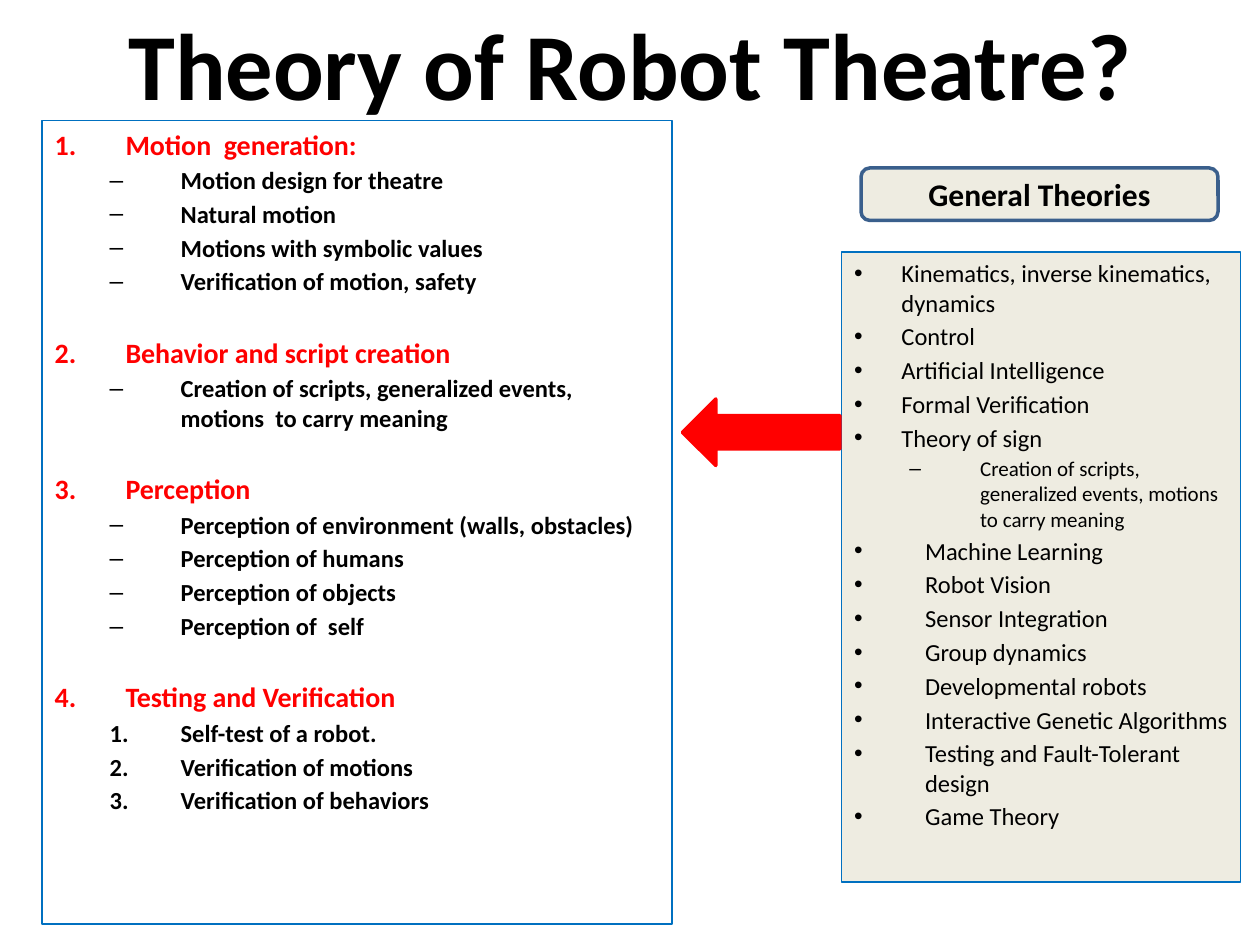
import pptx
import pptx.util
import pptx.dml.color
import pptx.enum.shapes
import pptx.enum.text
import pptx.oxml.ns
from dataclasses import dataclass
from lxml import etree

Pt = pptx.util.Pt
SHAPES = pptx.enum.shapes.MSO_SHAPE
ANCHOR = pptx.enum.text.MSO_ANCHOR
ALIGN = pptx.enum.text.PP_ALIGN


@dataclass(frozen=True)
class Theme:
    font: str = "Calibri"
    text: str = "000000"
    accent: str = "FF0000"
    panel: str = "EEECE1"
    border: str = "0070C0"
    badge_border: str = "3A5F8C"
    title_size: float = 54
    badge_size: float = 18
    heading_size: float = 16
    item_size: float = 14
    detail_size: float = 12


THEME = Theme()
NUMBERED = "1."
HANGING = 40.5
TOPIC_GAP = 22.6

TOPICS = [
    ("Motion  generation:", "–", [
        "Motion design for theatre", "Natural motion",
        "Motions with symbolic values", "Verification of motion, safety"]),
    ("Behavior and script creation", "–", [
        "Creation of scripts, generalized events, motions  to carry meaning"]),
    ("Perception", "–", [
        "Perception of environment (walls, obstacles)", "Perception of humans",
        "Perception of objects", "Perception of  self"]),
    ("Testing and Verification", NUMBERED, [
        "Self-test of a robot.", "Verification of motions",
        "Verification of behaviors"]),
]
CORE_THEORIES = [
    "Kinematics, inverse kinematics, dynamics", "Control",
    "Artificial Intelligence", "Formal Verification", "Theory of sign"]
SIGN_DETAIL = "Creation of scripts, generalized events, motions  to carry meaning"
APPLIED_THEORIES = [
    "Machine Learning", "Robot Vision", "Sensor Integration",
    "Group dynamics", "Developmental robots", "Interactive Genetic Algorithms",
    "Testing and Fault-Tolerant design", "Game Theory"]


def rgb(value):
    return pptx.dml.color.RGBColor.from_string(value)


def set_bullet(paragraph, bullet, margin, hanging):
    properties = paragraph._p.get_or_add_pPr()
    properties.set("marL", str(Pt(margin)))
    properties.set("indent", str(-Pt(hanging)))
    qn = pptx.oxml.ns.qn
    if bullet == NUMBERED:
        etree.SubElement(properties, qn("a:buFont"), typeface="+mj-lt")
        etree.SubElement(properties, qn("a:buAutoNum"), type="arabicPeriod")
    else:
        etree.SubElement(properties, qn("a:buFont"), typeface="Arial")
        etree.SubElement(properties, qn("a:buChar"), char=bullet)


def add_text(frame, text, size, color=THEME.text, bold=False, align=ALIGN.LEFT,
             level=0, before=None, bullet=None, margin=0, hanging=HANGING):
    """Write text into the first free paragraph of the frame."""
    paragraph = frame.paragraphs[-1]
    if paragraph.runs:
        paragraph = frame.add_paragraph()
    paragraph.alignment = align
    paragraph.level = level
    if before is not None:
        paragraph.space_before = Pt(before)
    if bullet:
        set_bullet(paragraph, bullet, margin, hanging)
    run = paragraph.add_run()
    run.text = text
    run.font.name = THEME.font
    run.font.size = Pt(size)
    run.font.bold = bold
    run.font.color.rgb = rgb(color)


def place(shape, left, top, width, height):
    shape.left, shape.top = Pt(left), Pt(top)
    shape.width, shape.height = Pt(width), Pt(height)


def prepare_frame(shape, anchor):
    frame = shape.text_frame
    frame.word_wrap = True
    frame.auto_size = pptx.enum.text.MSO_AUTO_SIZE.NONE
    frame.vertical_anchor = anchor
    return frame


def set_border(shape, color, width):
    shape.line.color.rgb = rgb(color)
    shape.line.width = Pt(width)


def add_box(slide, kind, bounds, fill, border, border_width):
    box = slide.shapes.add_shape(kind, *map(Pt, bounds))
    box.shadow.inherit = False
    box.fill.solid()
    box.fill.fore_color.rgb = rgb(fill)
    set_border(box, border, border_width)
    return box


def fill_title(title):
    place(title, 36, 0, 648, 72)
    add_text(prepare_frame(title, ANCHOR.MIDDLE), "Theory of Robot Theatre?",
             THEME.title_size, bold=True, align=ALIGN.CENTER)


def fill_topics(body):
    place(body, 24, 69, 360, 459)
    set_border(body, THEME.border, 0.75)
    frame = prepare_frame(body, ANCHOR.TOP)
    for index, (heading, bullet, items) in enumerate(TOPICS):
        add_text(frame, heading, THEME.heading_size, color=THEME.accent,
                 bold=True, before=TOPIC_GAP if index else 0,
                 bullet=NUMBERED, margin=HANGING)
        for item in items:
            add_text(frame, item, THEME.item_size, bold=True, level=1,
                     before=2.5, bullet=bullet, margin=72)


def add_theories(slide):
    panel = add_box(slide, SHAPES.RECTANGLE, (481, 144, 228, 360),
                    THEME.panel, THEME.border, 0.75)
    frame = prepare_frame(panel, ANCHOR.TOP)
    for index, theory in enumerate(CORE_THEORIES):
        add_text(frame, theory, THEME.item_size, before=2.5 if index else 0,
                 bullet="•", margin=27, hanging=27)
    add_text(frame, SIGN_DETAIL, THEME.detail_size, level=1, before=2,
             bullet="–", margin=72)
    for theory in APPLIED_THEORIES:
        add_text(frame, theory, THEME.item_size, before=2.5,
                 bullet="•", margin=HANGING)


def add_badge(slide):
    badge = add_box(slide, SHAPES.ROUNDED_RECTANGLE, (492, 96, 204, 30),
                    THEME.panel, THEME.badge_border, 2)
    add_text(prepare_frame(badge, ANCHOR.MIDDLE), "General Theories",
             THEME.badge_size, bold=True, align=ALIGN.CENTER)


def main():
    deck = pptx.Presentation()
    deck.slide_width, deck.slide_height = Pt(720), Pt(540)
    slide = deck.slides.add_slide(deck.slide_layouts[1])

    # Title and numbered topics
    fill_title(slide.shapes.title)
    fill_topics(slide.placeholders[1])

    # General theories, pointing at the topics
    add_theories(slide)
    arrow = add_box(slide, SHAPES.RIGHT_ARROW, (390, 228, 90, 38),
                    THEME.accent, THEME.accent, 2)
    arrow.rotation = 180
    add_badge(slide)

    deck.save("out.pptx")


if __name__ == "__main__":
    main()
